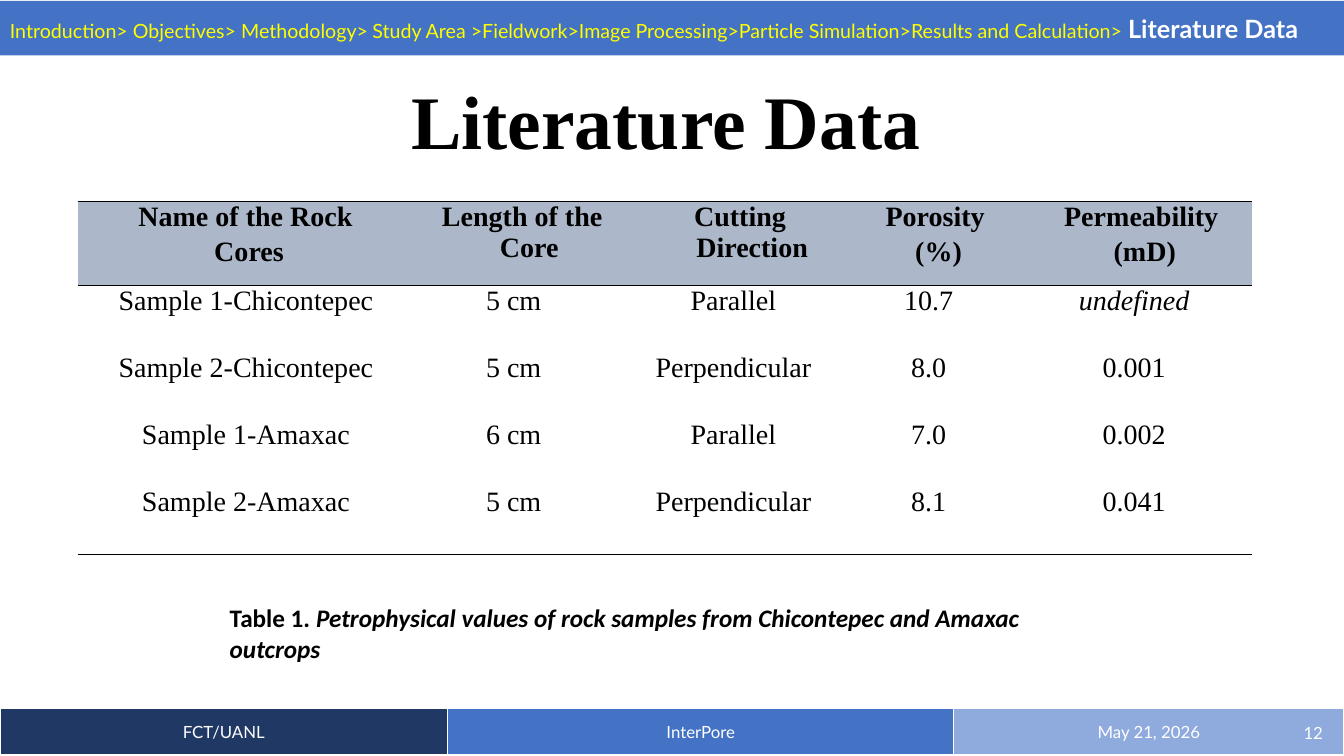
"""Build the Literature Data slide with its rock sample table."""
from dataclasses import dataclass
from typing import Optional

from lxml.etree import SubElement
from pptx import Presentation
from pptx.dml.color import RGBColor
from pptx.enum.shapes import MSO_SHAPE
from pptx.enum.text import MSO_ANCHOR, MSO_AUTO_SIZE, PP_ALIGN
from pptx.oxml.ns import qn
from pptx.shapes.autoshape import Shape
from pptx.slide import Slide
from pptx.table import Table, _Cell
from pptx.text.text import TextFrame, _Paragraph
from pptx.util import Inches, Pt

WHITE = RGBColor(0xFF, 0xFF, 0xFF)
BLACK = RGBColor(0x00, 0x00, 0x00)
YELLOW = RGBColor(0xFF, 0xFF, 0x00)
BLUE = RGBColor(0x44, 0x72, 0xC4)
NAVY = RGBColor(0x20, 0x38, 0x64)
LIGHT_BLUE = RGBColor(0x8F, 0xAA, 0xDC)
GREY_BLUE = RGBColor(0xAC, 0xB8, 0xCA)


@dataclass(frozen=True)
class TextStyle:
    font: str
    size: float
    color: RGBColor
    bold: bool = False
    italic: bool = False


@dataclass(frozen=True)
class Border:
    color: RGBColor
    width: float


@dataclass(frozen=True)
class Column:
    header: tuple[str, ...]
    values: tuple[str, ...]
    width: float
    header_margin: float
    header_indent: float
    body_margin: float = 0


@dataclass(frozen=True)
class FooterPart:
    text: str
    width: float
    fill: RGBColor


FOOTER_STYLE = TextStyle("Lato", 12, WHITE)
TRAIL_STYLE = TextStyle("Lato", 14, YELLOW)
TRAIL_GAP_STYLE = TextStyle("Lato", 11, YELLOW)
CURRENT_STYLE = TextStyle("Lato", 18, WHITE, bold=True)
TITLE_STYLE = TextStyle("Times New Roman", 54, BLACK, bold=True)
CAPTION_STYLE = TextStyle("Calibri", 18, BLACK, bold=True)
HEADER_STYLE = TextStyle("Times New Roman", 20, BLACK, bold=True)
BODY_STYLE = TextStyle("Times New Roman", 20, BLACK)
UNDEFINED_STYLE = TextStyle("Times New Roman", 20, BLACK, italic=True)
RULE = Border(BLACK, 1)

FOOTER_PARTS = (
    FooterPart("FCT/UANL", 4.44, NAVY),
    FooterPart("InterPore", 5.02, BLUE),
    FooterPart("May 21, 2026", 3.87, LIGHT_BLUE),
)
COLUMNS = (
    Column(("Name of the Rock ", "Cores"),
           ("Sample 1-Chicontepec", "Sample 2-Chicontepec", "Sample 1-Amaxac", "Sample 2-Amaxac"),
           3.26, 0.59, -0.45, 0.08),
    Column(("Length of the Core",), ("5 cm", "5 cm", "6 cm", "5 cm"), 2.13, 0.31, -0.14),
    Column(("Cutting Direction",),
           ("Parallel", "Perpendicular", "Parallel", "Perpendicular"), 2.18, 0.42, -0.24, 0.05),
    Column(("Porosity", " (%)"), ("10.7", "8.0", "7.0", "8.1"), 1.74, 0.32, -0.19),
    Column(("Permeability", " (mD)"),
           ("undefined", "0.001", "0.002", "0.041"), 2.34, 0.42, -0.28),
)
ROW_HEIGHTS = (0.83, 0.67, 0.66, 0.67, 0.67)


def apply_style(font, style: TextStyle) -> None:
    font.name = style.font
    font.size = Pt(style.size)
    font.color.rgb = style.color
    font.bold = style.bold
    font.italic = style.italic


def add_run(paragraph: _Paragraph, text: str, style: TextStyle) -> None:
    run = paragraph.add_run()
    run.text = text
    apply_style(run.font, style)


def write_lines(frame: TextFrame, lines: tuple[str, ...], style: TextStyle,
                margin: float = 0, indent: float = 0) -> None:
    for index, line in enumerate(lines):
        paragraph = frame.add_paragraph() if index else frame.paragraphs[0]
        paragraph.text = line
        paragraph.alignment = PP_ALIGN.CENTER
        if index:
            paragraph.space_before = Pt(2.8)
        properties = paragraph._p.get_or_add_pPr()
        properties.set("marL", str(Inches(margin)))
        properties.set("indent", str(Inches(indent)))
        apply_style(paragraph.font, style)


def set_borders(cell: _Cell, left: Optional[Border] = None, right: Optional[Border] = None,
                top: Optional[Border] = None, bottom: Optional[Border] = None) -> None:
    properties = cell._tc.get_or_add_tcPr()
    sides = (("a:lnL", left), ("a:lnR", right), ("a:lnT", top), ("a:lnB", bottom))
    for position, (tag, border) in enumerate(sides):
        line = SubElement(properties, qn(tag))
        properties.insert(position, line)
        if border:
            line.set("w", str(Pt(border.width)))
            fill = SubElement(line, qn("a:solidFill"))
            SubElement(fill, qn("a:srgbClr")).set("val", str(border.color))
        else:
            SubElement(line, qn("a:noFill"))


def add_plain_table(slide: Slide, left: float, top: float, widths: list[float],
                    heights: tuple[float, ...]) -> Table:
    table = slide.shapes.add_table(len(heights), len(widths), Inches(left), Inches(top),
                                   Inches(sum(widths)), Inches(sum(heights))).table
    table.first_row = False
    table.horz_banding = False
    for column, width in zip(table.columns, widths):
        column.width = Inches(width)
    for row, height in zip(table.rows, heights):
        row.height = Inches(height)
    return table


def add_text_box(slide: Slide, left: float, top: float, width: float, height: float) -> Shape:
    box = slide.shapes.add_textbox(Inches(left), Inches(top), Inches(width), Inches(height))
    box.text_frame.word_wrap = True
    return box


def add_footer(slide: Slide) -> None:
    table = add_plain_table(slide, 0, 7.03, [part.width for part in FOOTER_PARTS], (0.47,))
    thin, thick = Border(WHITE, 1), Border(WHITE, 3)
    for cell, part in zip(table.iter_cells(), FOOTER_PARTS):
        cell.fill.solid()
        cell.fill.fore_color.rgb = part.fill
        cell.vertical_anchor = MSO_ANCHOR.MIDDLE
        write_lines(cell.text_frame, (part.text,), FOOTER_STYLE)
        set_borders(cell, thin, thin, thin, thick)
    frame = add_text_box(slide, 10.22, 7.07, 3, 0.4).text_frame
    frame.vertical_anchor = MSO_ANCHOR.MIDDLE
    paragraph = frame.paragraphs[0]
    paragraph.text = "12"
    paragraph.alignment = PP_ALIGN.RIGHT
    paragraph.space_after = Pt(6)
    apply_style(paragraph.font, FOOTER_STYLE)


def add_trail(slide: Slide) -> None:
    bar = slide.shapes.add_shape(MSO_SHAPE.RECTANGLE, 0, Inches(0.01), Inches(13.33), Inches(0.54))
    bar.shadow.inherit = False
    bar.fill.solid()
    bar.fill.fore_color.rgb = BLUE
    bar.line.fill.background()
    bar.text_frame.vertical_anchor = MSO_ANCHOR.MIDDLE
    paragraph = bar.text_frame.paragraphs[0]
    paragraph.alignment = PP_ALIGN.LEFT
    add_run(paragraph, "Introduction> Objectives> Methodology>", TRAIL_STYLE)
    add_run(paragraph, " ", TRAIL_GAP_STYLE)
    add_run(paragraph, "Study Area >Fieldwork>Image Processing>Particle Simulation>"
            "Results and Calculation> ", TRAIL_STYLE)
    add_run(paragraph, "Literature Data", CURRENT_STYLE)


def add_title_and_caption(slide: Slide) -> None:
    title = add_text_box(slide, 2.17, 0.77, 8.87, 0.94).text_frame
    title.vertical_anchor = MSO_ANCHOR.MIDDLE
    write_lines(title, ("Literature Data",), TITLE_STYLE)
    title.paragraphs[0].line_spacing = 0.9
    caption = add_text_box(slide, 2.18, 5.93, 8.98, 0.4).text_frame
    caption.auto_size = MSO_AUTO_SIZE.SHAPE_TO_FIT_TEXT
    paragraph = caption.paragraphs[0]
    apply_style(paragraph.font, CAPTION_STYLE)
    add_run(paragraph, "Table 1. ", CAPTION_STYLE)
    add_run(paragraph, "Petrophysical values of rock samples from Chicontepec and Amaxac outcrops",
            TextStyle("Calibri", 18, BLACK, bold=True, italic=True))


def add_sample_table(slide: Slide) -> None:
    table = add_plain_table(slide, 0.77, 2, [column.width for column in COLUMNS], ROW_HEIGHTS)
    last_row = len(ROW_HEIGHTS) - 1
    for column_index, column in enumerate(COLUMNS):
        for row_index in range(len(ROW_HEIGHTS)):
            cell = table.cell(row_index, column_index)
            cell.margin_left = cell.margin_right = cell.margin_top = cell.margin_bottom = 0
            if row_index == 0:
                cell.fill.solid()
                cell.fill.fore_color.rgb = GREY_BLUE
                write_lines(cell.text_frame, column.header, HEADER_STYLE,
                            column.header_margin, column.header_indent)
            else:
                cell.fill.background()
                value = column.values[row_index - 1]
                style = UNDEFINED_STYLE if value == "undefined" else BODY_STYLE
                write_lines(cell.text_frame, (value,), style, column.body_margin)
            set_borders(cell, top=RULE if row_index < 2 else None,
                        bottom=RULE if row_index in (0, last_row) else None)


def main() -> None:
    presentation = Presentation()
    presentation.slide_width = Inches(13.33)
    presentation.slide_height = Inches(7.5)
    slide = presentation.slides.add_slide(presentation.slide_layouts[6])
    add_footer(slide)
    add_trail(slide)
    add_title_and_caption(slide)
    add_sample_table(slide)
    presentation.save("out.pptx")


if __name__ == "__main__":
    main()
